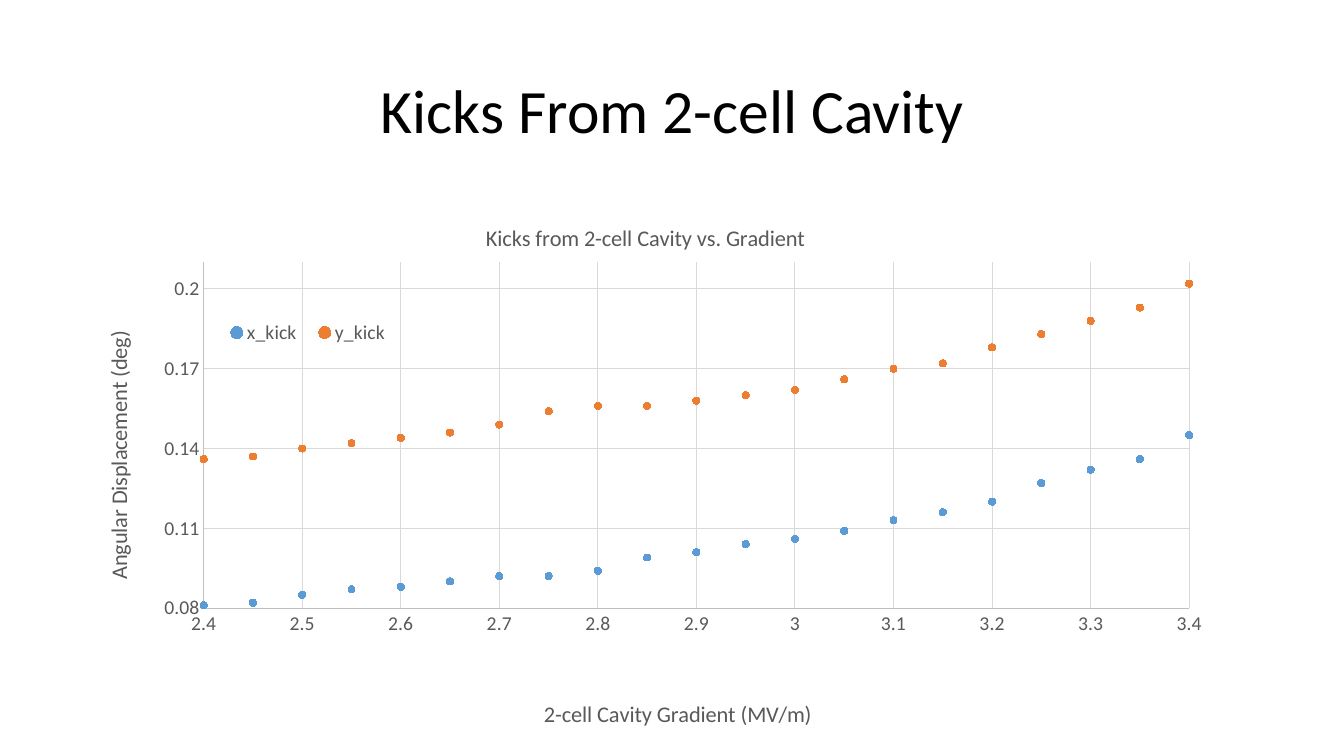
from lxml import etree
from pptx import Presentation
from pptx.chart.data import XyChartData
from pptx.dml.color import RGBColor
from pptx.enum.chart import (XL_CHART_TYPE, XL_LEGEND_POSITION,
                             XL_MARKER_STYLE, XL_TICK_MARK)
from pptx.enum.text import MSO_ANCHOR, PP_ALIGN
from pptx.oxml.ns import qn
from pptx.util import Emu, Pt

SCATTER = XL_CHART_TYPE.XY_SCATTER
LEGEND_RIGHT = XL_LEGEND_POSITION.RIGHT
CIRCLE = XL_MARKER_STYLE.CIRCLE
NO_TICK = XL_TICK_MARK.NONE
MIDDLE = MSO_ANCHOR.MIDDLE
CENTER = PP_ALIGN.CENTER

BLACK = RGBColor(0x00, 0x00, 0x00)
GRAY_TEXT = RGBColor(0x59, 0x59, 0x59)
AXIS_GRAY = RGBColor(0xBF, 0xBF, 0xBF)
GRID_GRAY = RGBColor(0xD9, 0xD9, 0xD9)
BLUE = RGBColor(0x5B, 0x9B, 0xD5)
ORANGE = RGBColor(0xED, 0x7D, 0x31)

EMU_PER_PX = 9144  # 100 px to the inch

GRADIENTS = [round(3.4 - 0.05 * step, 2) for step in range(21)]
KICKS = {
    "x_kick": (BLUE, [0.145, 0.136, 0.132, 0.127, 0.12, 0.116, 0.113,
                      0.109, 0.106, 0.104, 0.101, 0.099, 0.094, 0.092,
                      0.092, 0.09, 0.088, 0.087, 0.085, 0.082, 0.081]),
    "y_kick": (ORANGE, [0.202, 0.193, 0.188, 0.183, 0.178, 0.172, 0.17,
                        0.166, 0.162, 0.16, 0.158, 0.156, 0.156, 0.154,
                        0.149, 0.146, 0.144, 0.142, 0.14, 0.137, 0.136]),
}


def px(length):
    return Emu(length * EMU_PER_PX)


def place(element, index, **settings):
    """Give a chart part a manual layout, as fractions of the chart."""
    for old in element.findall(qn("c:layout")):
        element.remove(old)
    layout = etree.Element(qn("c:layout"))
    manual = etree.SubElement(layout, qn("c:manualLayout"))
    for tag, value in settings.items():
        etree.SubElement(manual, qn("c:" + tag)).set("val", str(value))
    element.insert(index, layout)


class SlideBuilder:
    font_name = "Calibri"

    def __init__(self, slide):
        self.slide = slide

    def style(self, font, size, color):
        font.name = self.font_name
        font.size = Pt(size)
        font.bold = False
        font.color.rgb = color

    def heading(self, text, left, top, width, height):
        box = self.slide.shapes.add_textbox(px(left), px(top), px(width), px(height))
        frame = box.text_frame
        frame.word_wrap = True
        frame.vertical_anchor = MIDDLE
        paragraph = frame.paragraphs[0]
        paragraph.alignment = CENTER
        paragraph.line_spacing = 0.9
        run = paragraph.add_run()
        run.text = text
        self.style(run.font, 44, BLACK)

    def scatter(self, series_by_name, left, top, width, height):
        data = XyChartData()
        for name, (_, kicks) in series_by_name.items():
            points = data.add_series(name)
            for gradient, kick in zip(GRADIENTS, kicks):
                points.add_data_point(gradient, kick)
        chart = self.slide.shapes.add_chart(
            SCATTER, px(left), px(top), px(width), px(height), data).chart
        self.style(chart.font, 10, BLACK)
        plot = chart.plots[0]
        plot.vary_by_categories = False
        for series, (color, _) in zip(plot.series, series_by_name.values()):
            series.format.line.fill.background()
            marker = series.marker
            marker.style = CIRCLE
            marker.size = 5
            marker.format.fill.solid()
            marker.format.fill.fore_color.rgb = color
            marker.format.line.color.rgb = color
        return chart

    def chart_title(self, title, text, x, y, rotation=0):
        frame = title.text_frame
        run = frame.paragraphs[0].add_run()
        run.text = text
        self.style(run.font, 16, GRAY_TEXT)
        body = frame._txBody.find(qn("a:bodyPr"))
        body.set("rot", str(rotation * 60000))
        body.set("vert", "horz")
        place(title._element, 1, xMode="edge", yMode="edge", x=x, y=y)

    def axis(self, axis, low, high, step):
        axis.minimum_scale = low
        axis.maximum_scale = high
        axis.major_unit = step
        axis.major_tick_mark = NO_TICK
        axis.minor_tick_mark = NO_TICK
        axis.has_major_gridlines = True
        axis.tick_labels.number_format = "General"
        axis.tick_labels.number_format_is_linked = False
        self.style(axis.tick_labels.font, 14, GRAY_TEXT)
        for line, color in ((axis.format.line, AXIS_GRAY),
                            (axis.major_gridlines.format.line, GRID_GRAY)):
            line.color.rgb = color
            line.width = Pt(0.75)

    def legend(self, chart, x, y, w, h):
        chart.has_legend = True
        legend = chart.legend
        legend.position = LEGEND_RIGHT
        legend.include_in_layout = False
        self.style(legend.font, 14, GRAY_TEXT)
        place(legend._element, 1, xMode="edge", yMode="edge", x=x, y=y, w=w, h=h)


def main():
    deck = Presentation()
    deck.slide_width, deck.slide_height = px(1333), px(750)
    builder = SlideBuilder(deck.slides.add_slide(deck.slide_layouts[6]))

    builder.heading("Kicks From 2-cell Cavity", 92, 40, 1150, 145)

    kicks_chart = builder.scatter(KICKS, 64, 196, 1150, 536)
    gradient_axis = kicks_chart.category_axis
    angle_axis = kicks_chart.value_axis
    builder.axis(gradient_axis, 2.4, 3.4, 0.1)
    builder.axis(angle_axis, 0.08, 0.21, 0.03)
    builder.chart_title(kicks_chart.chart_title,
                        "Kicks from 2-cell Cavity vs. Gradient", 0.36, 0.04)
    builder.chart_title(gradient_axis.axis_title,
                        "2-cell Cavity Gradient (MV/m)", 0.41, 0.92)
    builder.chart_title(angle_axis.axis_title,
                        "Angular Displacement (deg)", 0.03, 0.24, rotation=-90)
    builder.legend(kicks_chart, 0.13, 0.22, 0.16, 0.06)
    plot_area = kicks_chart.plots[0]._element.getparent()
    place(plot_area, 0, layoutTarget="inner", xMode="edge", yMode="edge",
          x=0.12, y=0.12, w=0.85, h=0.64)

    deck.save("out.pptx")


if __name__ == "__main__":
    main()
